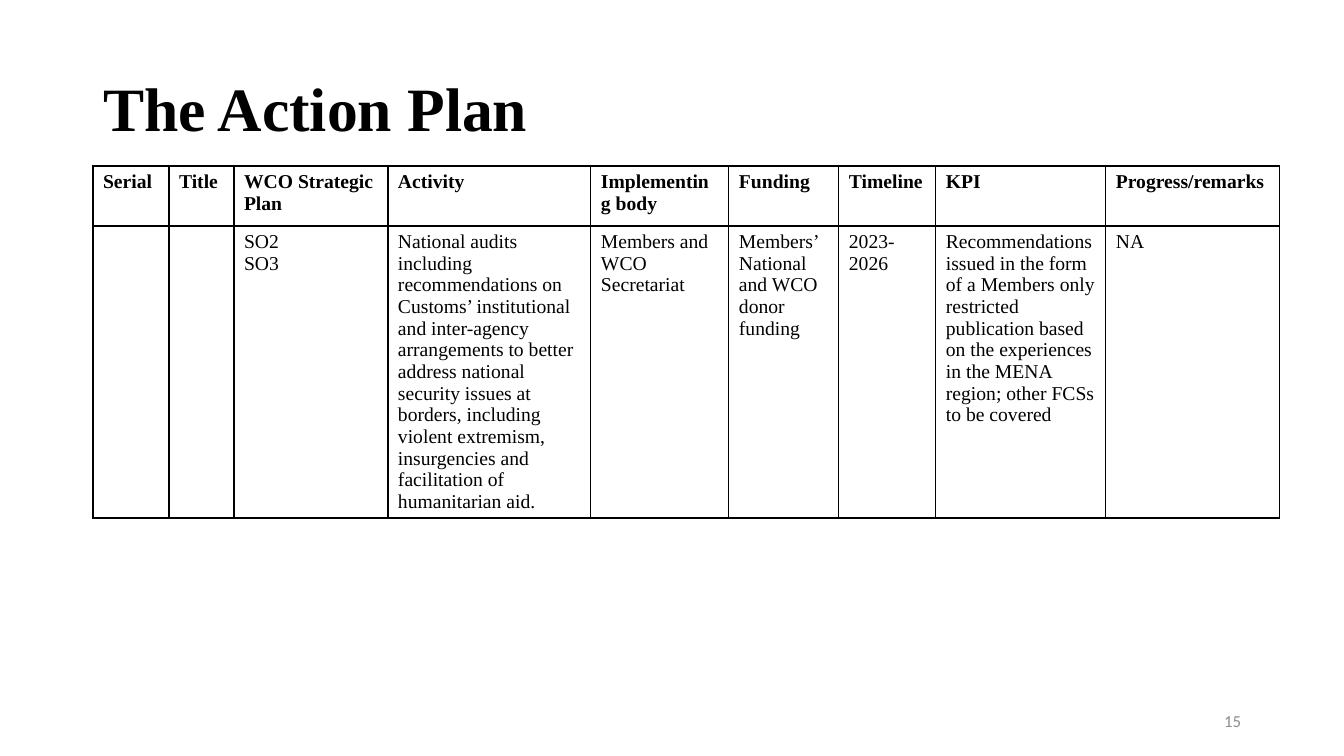
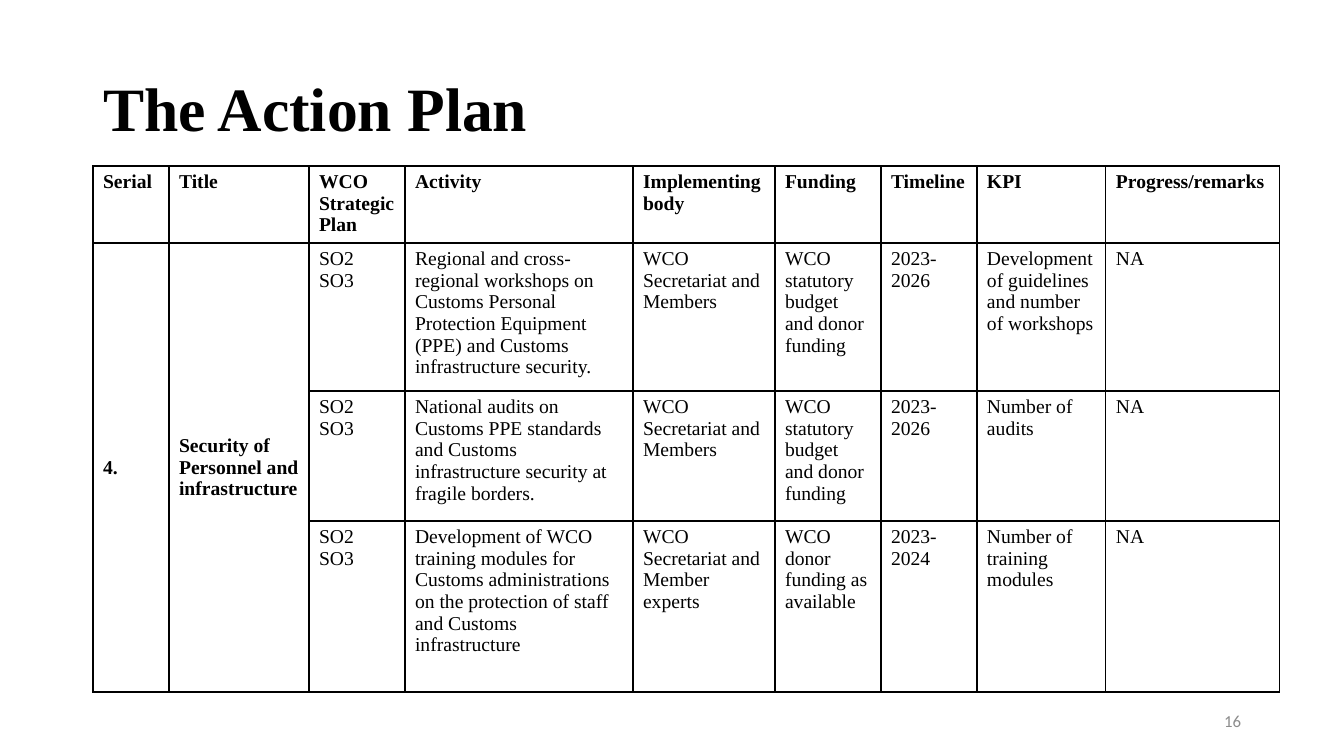
"""Build two action plan slides, each with a title, a bordered table and a page number."""
from lxml.etree import SubElement
from pptx import Presentation
from pptx.dml.color import RGBColor
from pptx.enum.text import MSO_ANCHOR as Anchor, MSO_AUTO_SIZE as AutoSize, PP_ALIGN as Align
from pptx.oxml.ns import qn
from pptx.util import Emu, Pt

COLORS = {"ink": "000000", "page": "8C8C8C"}
SERIF, SANS = "Times New Roman", "Calibri"
TITLE = "The Action Plan"
HEADER = ["Serial", "Title", "WCO Strategic Plan", "Activity", "Implementing body",
          "Funding", "Timeline", "KPI", "Progress/remarks"]
GOALS = "SO2\nSO3"
SECRETARIAT = "WCO Secretariat and Members"
STATUTORY = "WCO statutory budget and donor funding"

SLIDES = [
    {
        "page": "15",
        "cols": [76, 65, 154, 203, 138, 110, 97, 170, 174],
        "heights": [60, 292],
        "rows": [
            ["", "", GOALS,
             "National audits including recommendations on Customs’ institutional and "
             "inter-agency arrangements to better address national security issues at "
             "borders, including violent extremism, insurgencies and facilitation of "
             "humanitarian aid.",
             "Members and WCO Secretariat", "Members’\nNational and WCO donor funding",
             "2023-2026",
             "Recommendations issued in the form of a Members only restricted publication "
             "based on the experiences in the MENA region; other FCSs to be covered",
             "NA"],
        ],
    },
    {
        "page": "16",
        "cols": [76, 140, 96, 228, 142, 106, 96, 129, 174],
        "heights": [77, 148, 130, 171],
        "rows": [
            ["4.", "Security of Personnel and infrastructure", GOALS,
             "Regional and cross-regional workshops on Customs Personal Protection "
             "Equipment (PPE) and Customs infrastructure security.",
             SECRETARIAT, STATUTORY, "2023-2026",
             "Development of guidelines and number of workshops", "NA"],
            ["", "", GOALS,
             "National audits on Customs PPE standards and Customs infrastructure "
             "security at fragile borders.",
             SECRETARIAT, STATUTORY, "2023-2026", "Number of audits", "NA"],
            ["", "", GOALS,
             "Development of WCO training modules for Customs administrations on the "
             "protection of staff and Customs infrastructure",
             "WCO Secretariat and Member experts", "WCO donor funding as available",
             "2023-2024", "Number of training modules", "NA"],
        ],
    },
]


def px(n):
    return Emu(round(n * 914400 / 100.8))


def style(p, size, color="ink", font=SERIF, bold=False):
    p.font.size, p.font.name, p.font.bold = Pt(size), font, bold
    p.font.color.rgb = RGBColor.from_string(COLORS[color])


def add_borders(cell):
    tc_pr = cell._tc.get_or_add_tcPr()
    for side in ("lnL", "lnR", "lnT", "lnB"):
        ln = SubElement(tc_pr, qn(f"a:{side}"), w=str(Pt(1)))
        fill = SubElement(ln, qn("a:solidFill"))
        SubElement(fill, qn("a:srgbClr"), val=COLORS["ink"])


def add_title(slide):
    title = slide.shapes.title
    title.left, title.top, title.width, title.height = map(px, (93, 59, 1159, 106))
    tf = title.text_frame
    tf.text, tf.auto_size, tf.vertical_anchor = TITLE, AutoSize.NONE, Anchor.MIDDLE
    p = tf.paragraphs[0]
    p.alignment, p.line_spacing = Align.LEFT, 0.9
    style(p, 44, bold=True)


def add_plan(slide, cols, heights, rows):
    rows = [HEADER] + rows
    box = map(px, (93, 166, sum(cols), sum(heights)))
    table = slide.shapes.add_table(len(rows), len(cols), *box).table
    table.first_row = table.horz_banding = False
    for col, width in zip(table.columns, cols):
        col.width = px(width)
    for r, (row, height) in enumerate(zip(rows, heights)):
        table.rows[r].height = px(height)
        for c, text in enumerate(row):
            cell = table.cell(r, c)
            cell.text = text
            add_borders(cell)
            cell.fill.background()
            for p in cell.text_frame.paragraphs:
                style(p, 14, bold=r == 0 or c < 2)
    if len(rows) > 2:
        for c in range(2):
            cell = table.cell(1, c)
            cell.merge(table.cell(len(rows) - 1, c))
            cell.vertical_anchor = Anchor.MIDDLE


def add_page_number(slide, number):
    tf = slide.shapes.add_textbox(*map(px, (949, 701, 302, 40))).text_frame
    tf.text, tf.word_wrap, tf.vertical_anchor = number, True, Anchor.MIDDLE
    p = tf.paragraphs[0]
    p.alignment = Align.RIGHT
    style(p, 12, "page", SANS)


def main():
    prs = Presentation()
    prs.slide_width, prs.slide_height = px(1344), px(756)
    for plan in SLIDES:
        slide = prs.slides.add_slide(prs.slide_layouts[5])
        add_title(slide)
        add_plan(slide, plan["cols"], plan["heights"], plan["rows"])
        add_page_number(slide, plan["page"])
    prs.save("out.pptx")


if __name__ == "__main__":
    main()
